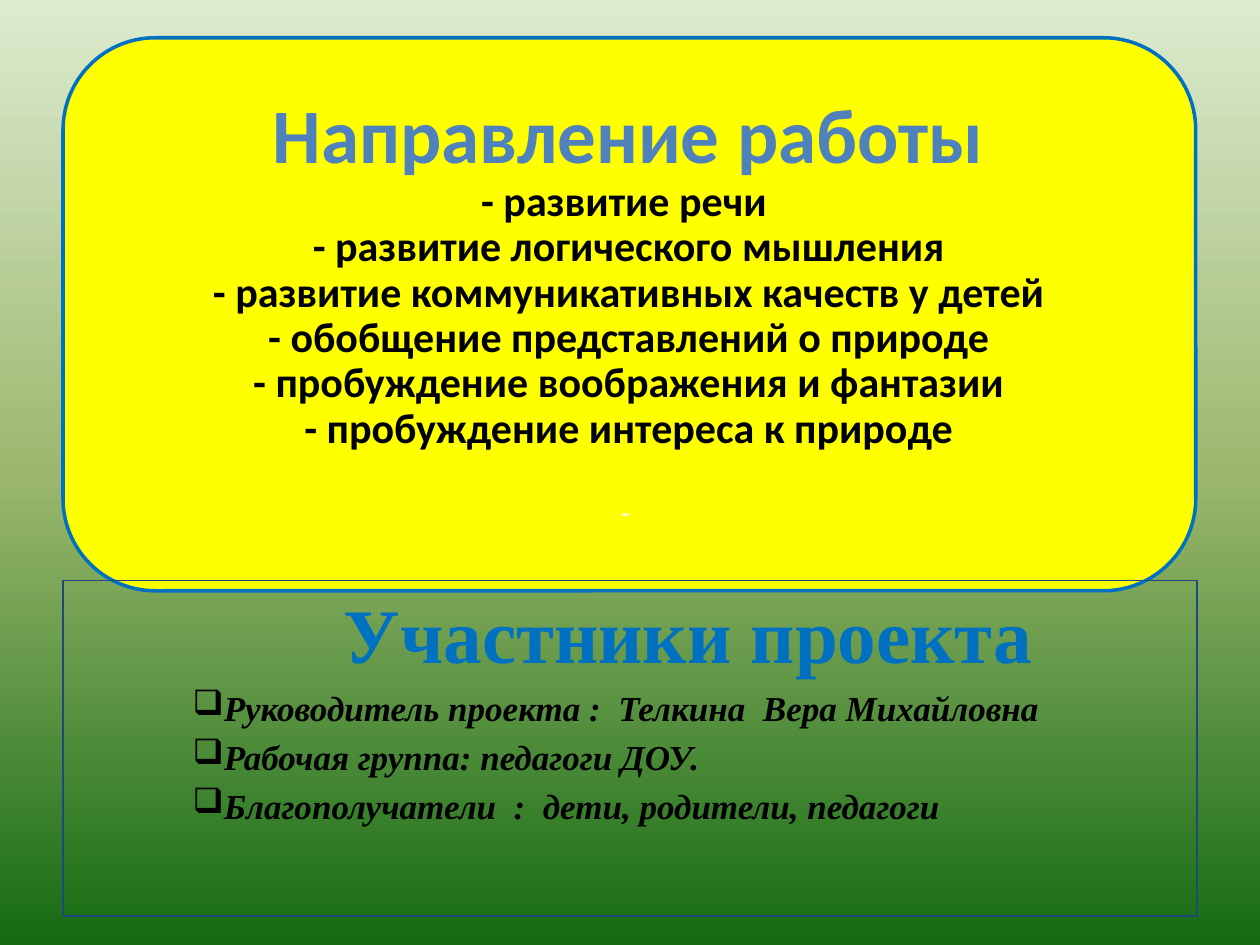
from copy import deepcopy

from lxml.etree import SubElement
from pptx import Presentation
from pptx.dml.color import RGBColor
from pptx.enum.shapes import MSO_SHAPE
from pptx.enum.text import MSO_ANCHOR, MSO_AUTO_SIZE, PP_ALIGN
from pptx.oxml.ns import qn
from pptx.util import Pt

COLORS = {
    "sky": "DDEBCF", "meadow": "9CB86E", "grass": "156B13",
    "panel": "FFFF00", "blue": "0070C0", "heading": "4F81BD",
    "frame": "1F497D", "text": "000000", "white": "FFFFFF",
}
DIRECTIONS = [
    "- развитие речи ",
    "- развитие логического мышления",
    "- развитие коммуникативных качеств у детей",
    "- обобщение представлений о природе",
    "- пробуждение воображения и фантазии",
    "- пробуждение интереса к природе",
]
PARTICIPANTS = [
    "Руководитель проекта :  Телкина  Вера Михайловна",
    "Рабочая группа: педагоги ДОУ.",
    "Благополучатели  :  дети, родители, педагоги",
]


def rgb(name):
    return RGBColor.from_string(COLORS[name])


class Deck:
    def __init__(self, prs):
        self.s = prs.slides.add_slide(prs.slide_layouts[5])

    def background(self, *names):
        """Vertical gradient with evenly spaced colours, top to bottom."""
        fill = self.s.background.fill
        fill.gradient()
        fill.gradient_angle = 270
        stops = next(self.s.element.iter(qn("a:gsLst")))
        for _ in names[2:]:
            stops.append(deepcopy(stops[0]))
        for i, (stop, name) in enumerate(zip(fill.gradient_stops, names)):
            stop.color.rgb = rgb(name)
            stop.position = i / (len(names) - 1)

    def panel(self, x, y, w, h):
        sp = self.s.shapes.add_shape(
            MSO_SHAPE.ROUNDED_RECTANGLE, Pt(x), Pt(y), Pt(w), Pt(h))
        sp.shadow.inherit = False
        sp.fill.solid()
        sp.fill.fore_color.rgb = rgb("panel")
        sp.line.color.rgb = rgb("blue")
        sp.line.width = Pt(2)

    def title(self, x, y, w, h):
        """Places the title placeholder in front of the shapes drawn so far."""
        sp = self.s.shapes.title
        sp.left, sp.top, sp.width, sp.height = Pt(x), Pt(y), Pt(w), Pt(h)
        self.s.shapes.element.append(sp.element)
        tf = sp.text_frame
        tf.word_wrap = True
        tf.auto_size = MSO_AUTO_SIZE.NONE
        tf.vertical_anchor = MSO_ANCHOR.MIDDLE
        tf.margin_left = tf.margin_right = Pt(13)
        tf.margin_top = tf.margin_bottom = Pt(6.5)
        return tf

    def framed_text(self, x, y, w, h):
        sp = self.s.shapes.add_textbox(Pt(x), Pt(y), Pt(w), Pt(h))
        sp.line.color.rgb = rgb("frame")
        sp.line.width = Pt(0.75)
        tf = sp.text_frame
        tf.word_wrap = True
        return tf

    def para(self, tf, text, font, size, color, align=PP_ALIGN.CENTER,
             bold=True, italic=False, before=0, spacing=1.0):
        p = tf.paragraphs[0]
        if p.runs:
            p = tf.add_paragraph()
        p.alignment = align
        p.space_before = Pt(before)
        p.line_spacing = spacing
        r = p.add_run()
        r.text = text
        r.font.name = font
        r.font.size = Pt(size)
        r.font.bold = bold
        r.font.italic = italic
        r.font.color.rgb = rgb(color)
        return p

    def indent(self, p, bullet=None):
        pPr = p._p.get_or_add_pPr()
        pPr.set("marL", str(Pt(27.4)))
        pPr.set("indent", str(Pt(39.6)))
        if bullet:
            SubElement(pPr, qn("a:buChar")).set("char", bullet)


def main():
    prs = Presentation()
    prs.slide_width, prs.slide_height = Pt(720), Pt(540)
    deck = Deck(prs)
    deck.background("sky", "meadow", "grass")

    deck.panel(36, 21.6, 647.3, 316)
    tf = deck.title(51.1, 36.7, 616.3, 285.1)
    deck.para(tf, "Направление работы", "Calibri", 44, "heading", spacing=0.9)
    for text in DIRECTIONS:
        deck.para(tf, text, "Calibri", 24, "text", spacing=0.9)
    deck.para(tf, "- ", "Calibri", 17, "white", bold=False, before=26.4,
              spacing=0.9)

    font = "Times New Roman"
    tf = deck.framed_text(36, 331.9, 648, 191.5)
    deck.indent(deck.para(tf, "Участники проекта", font, 44, "blue", before=8.8))
    for text in PARTICIPANTS:
        p = deck.para(tf, text, font, 20, "text", align=PP_ALIGN.LEFT,
                      italic=True, before=4)
        deck.indent(p, "❑")

    prs.save("out.pptx")


if __name__ == "__main__":
    main()
